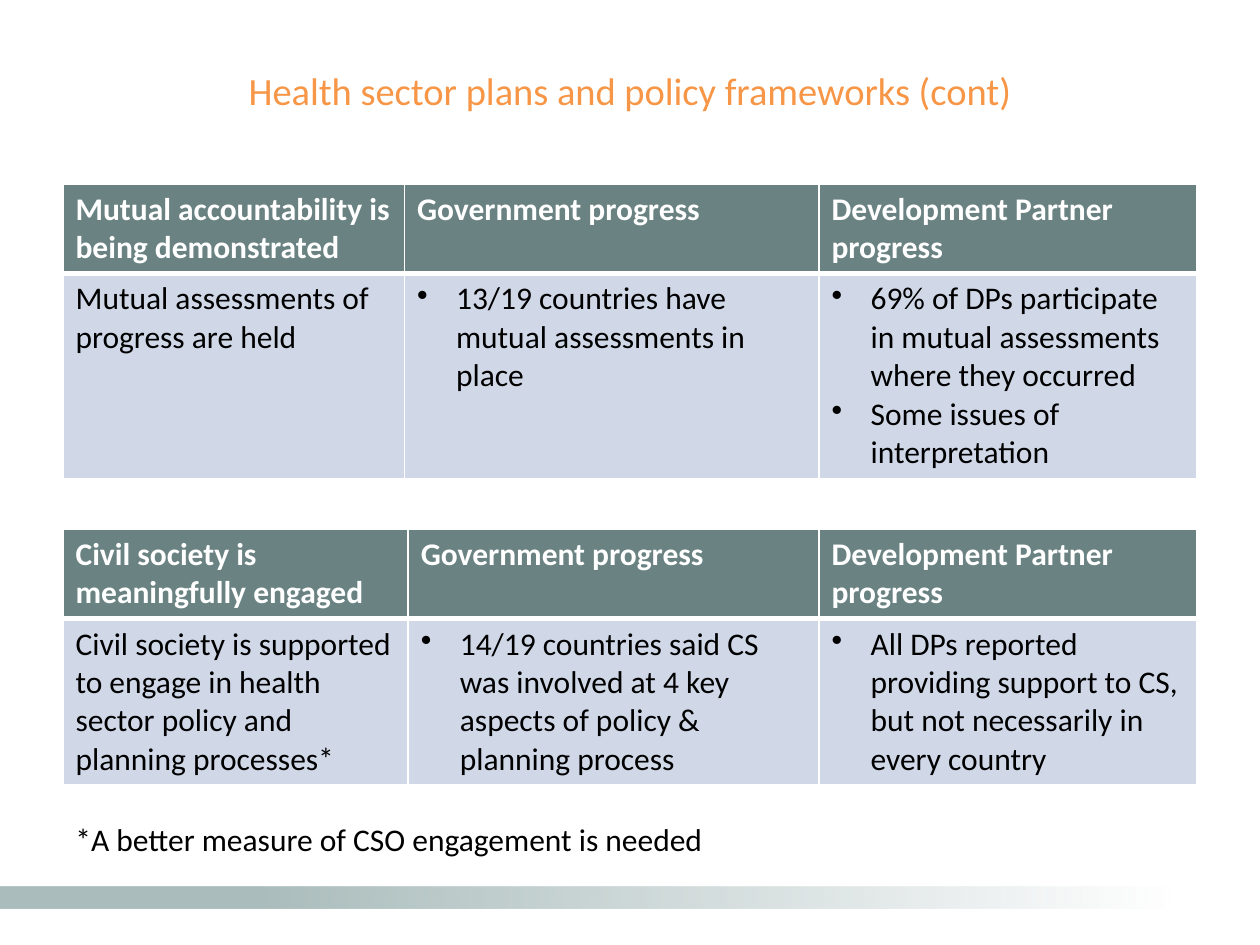
from pptx import Presentation
from pptx.dml.color import RGBColor
from pptx.enum.shapes import MSO_SHAPE
from pptx.enum.text import MSO_ANCHOR, PP_ALIGN
from pptx.oxml import parse_xml
from pptx.oxml.ns import nsdecls, qn
from pptx.oxml.xmlchemy import OxmlElement
from pptx.util import Pt

RECTANGLE = MSO_SHAPE.RECTANGLE
CENTER = PP_ALIGN.CENTER
MIDDLE = MSO_ANCHOR.MIDDLE

EMU_PER_PX = 9144  # 100 px to the inch
TITLE_ONLY = 5
LEFT = 50
BULLET_INDENT = 31

WHITE, BLACK, ORANGE = "FFFFFF", "000000", "F79646"
HEADER_FILL, BODY_FILL = "6A8382", "D0D8E8"
BAR_COLOR, BAR_OPACITY = "1A4B4A", 37


def px(length):
    return length * EMU_PER_PX


def rgb(color):
    return RGBColor.from_string(color)


def add_bullet(paragraph):
    properties = paragraph._p.get_or_add_pPr()
    properties.set("marL", str(px(BULLET_INDENT)))
    properties.set("indent", str(-px(BULLET_INDENT)))
    bullet = OxmlElement("a:buChar")
    bullet.set("char", "•")
    properties.append(bullet)


def write_text(frame, text, font="Calibri", size=18, color=BLACK, bold=False,
               align=None, bullets=False):
    """Fill a text frame, one paragraph for each line of text."""
    frame.word_wrap = True
    frame.text = text
    for paragraph in frame.paragraphs:
        if bullets:
            add_bullet(paragraph)
        if align is not None:
            paragraph.alignment = align
        paragraph.font.name = font
        paragraph.font.size = Pt(size)
        paragraph.font.bold = bold
        paragraph.font.color.rgb = rgb(color)


def set_borders(cell, top, bottom):
    """Draw white borders; top and bottom are widths in points."""
    properties = cell._tc.get_or_add_tcPr()
    for side, width in (("L", 1), ("R", 1), ("T", top), ("B", bottom)):
        properties.append(parse_xml(
            f'<a:ln{side} {nsdecls("a")} w="{Pt(width)}"><a:solidFill>'
            f'<a:srgbClr val="{WHITE}"/></a:solidFill></a:ln{side}>'))


class SlideBuilder:
    """Holds the current slide and adds elements in one style."""

    def __init__(self, presentation):
        self.slide = presentation.slides.add_slide(
            presentation.slide_layouts[TITLE_ONLY])

    def title(self, text, left, top, width, height):
        shape = self.slide.shapes.title
        shape.left, shape.top = px(left), px(top)
        shape.width, shape.height = px(width), px(height)
        shape.text_frame.vertical_anchor = MIDDLE
        write_text(shape.text_frame, text, size=22, color=ORANGE, align=CENTER)

    def fading_bar(self, left, top, width, height):
        shape = self.slide.shapes.add_shape(
            RECTANGLE, px(left), px(top), px(width), px(height))
        shape.shadow.inherit = False
        shape.line.fill.background()
        shape.fill.gradient()
        shape.fill.gradient_angle = 0
        stops = ((0.22, BAR_COLOR), (1, WHITE))
        for stop, (position, color) in zip(shape.fill.gradient_stops, stops):
            stop.position = position
            stop.color.rgb = rgb(color)
        for color in shape._element.iter(qn("a:srgbClr")):
            alpha = OxmlElement("a:alpha")
            alpha.set("val", str(BAR_OPACITY * 1000))
            color.append(alpha)

    def progress_table(self, top, columns, rows, topic, measure, government, partners):
        """Add a header row and one row of findings."""
        table = self.slide.shapes.add_table(
            len(rows), len(columns), px(LEFT), px(top),
            px(sum(columns)), px(sum(rows))).table
        table.horz_banding = False
        for column, width in zip(table.columns, columns):
            column.width = px(width)
        for row, height in zip(table.rows, rows):
            row.height = px(height)
        headers = (topic, "Government progress", "Development Partner progress")
        findings = (measure, government, partners)
        for index, (header, finding) in enumerate(zip(headers, findings)):
            self.cell(table.cell(0, index), header, HEADER_FILL, 1, 3,
                      color=WHITE, bold=True)
            self.cell(table.cell(1, index), finding, BODY_FILL, 3, 1,
                      bullets=index > 0)

    def cell(self, cell, text, fill, top, bottom, **text_format):
        set_borders(cell, top, bottom)
        cell.fill.solid()
        cell.fill.fore_color.rgb = rgb(fill)
        write_text(cell.text_frame, text, **text_format)

    def note(self, text, left, top, width, height):
        box = self.slide.shapes.add_textbox(
            px(left), px(top), px(width), px(height))
        write_text(box.text_frame, text)


def main():
    presentation = Presentation()
    presentation.slide_width, presentation.slide_height = px(1000), px(750)
    builder = SlideBuilder(presentation)
    builder.fading_bar(0, 704, 929, 17)
    builder.title("Health sector plans and policy frameworks (cont)", LEFT, 9, 900, 125)
    builder.progress_table(
        146, (271, 329, 300), (70, 163),
        "Mutual accountability is being demonstrated",
        "Mutual assessments of progress are held",
        "13/19 countries have mutual assessments in place",
        "69% of DPs participate in mutual assessments where they occurred\n"
        "Some issues of interpretation")
    builder.progress_table(
        420, (274, 326, 300), (70, 132),
        "Civil society is meaningfully engaged",
        "Civil society is supported to engage in health sector policy "
        "and planning processes*",
        "14/19 countries said CS was involved at 4 key aspects of policy "
        "& planning process",
        "All DPs reported providing support to CS, but not necessarily "
        "in every country")
    builder.note("*A better measure of CSO engagement is needed", LEFT, 646, 879, 40)
    presentation.save("out.pptx")


if __name__ == "__main__":
    main()
